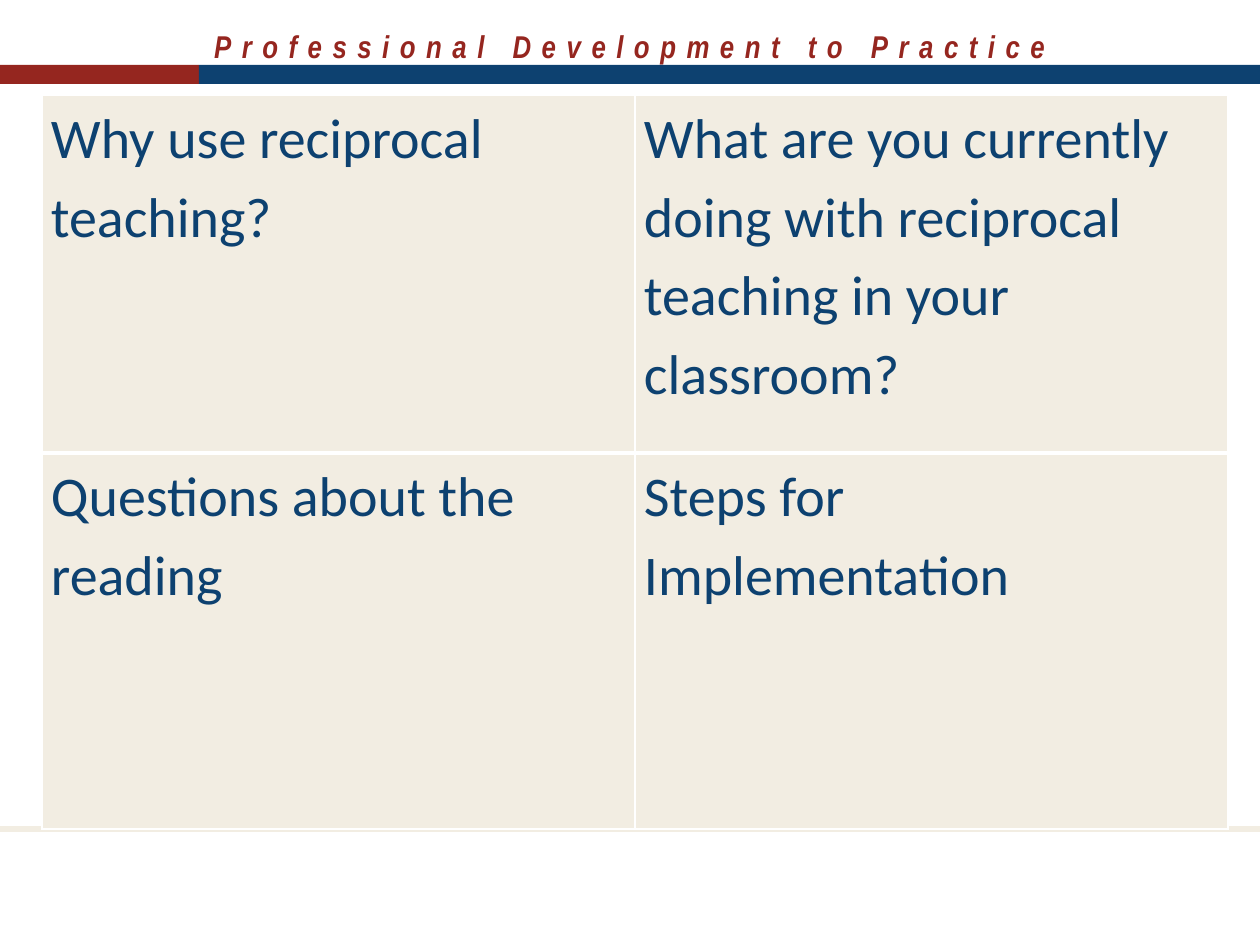
from lxml import etree
from pptx import Presentation
from pptx.dml.color import RGBColor
from pptx.enum.shapes import MSO_CONNECTOR, MSO_SHAPE
from pptx.enum.text import PP_ALIGN
from pptx.oxml.ns import qn
from pptx.util import Pt

RECTANGLE = MSO_SHAPE.RECTANGLE
STRAIGHT = MSO_CONNECTOR.STRAIGHT
CENTER = PP_ALIGN.CENTER
PX = 914400 / 126
COLORS = {"red": "95261F", "navy": "0D4170", "cream": "F2EDE2", "white": "FFFFFF"}
QUESTIONS = [
    ["Why use reciprocal teaching?",
     "What are you currently doing with reciprocal teaching in your classroom?"],
    ["Questions about the reading", "Steps for Implementation"],
]


def px(length):
    """Turn pixels into EMU."""
    return round(length * PX)


def color(name):
    """Look up a named colour."""
    return RGBColor.from_string(COLORS[name])


def style_font(font, name, size, color_name):
    """Set the face, size and colour of a font."""
    font.name, font.size = name, Pt(size)
    font.color.rgb = color(color_name)


def add_bar(slide, left, top, width, height, color_name):
    """Add a plain filled bar."""
    bar = slide.shapes.add_shape(RECTANGLE, px(left), px(top), px(width), px(height))
    bar.shadow.inherit = False
    bar.fill.solid()
    bar.fill.fore_color.rgb = color(color_name)
    bar.line.fill.background()


def add_header(slide, left, top, width):
    """Add the spaced title with the two-colour band below it."""
    box = slide.shapes.add_textbox(px(left), px(top), px(width), px(50))
    box.text_frame.word_wrap = True
    paragraph = box.text_frame.paragraphs[0]
    paragraph.alignment = CENTER
    run = paragraph.add_run()
    run.text = "Professional Development to Practice"
    run.font._element.set("spc", "600")
    style_font(paragraph.font, "Arial Narrow", 18, "red")
    paragraph.font.bold = paragraph.font.italic = True
    red_width = 199
    add_bar(slide, left, top + 44, red_width, 19, "red")
    add_bar(slide, left + red_width, top + 44, width - red_width, 19, "navy")


def add_footer_rule(slide, left, top, width):
    """Add the thin rule above the footer."""
    rule = slide.shapes.add_connector(STRAIGHT, px(left), px(top), px(left + width), px(top))
    rule.line.color.rgb = color("cream")
    rule.line.width = Pt(3)
    etree.SubElement(rule._element.spPr, qn("a:effectLst"))


def set_borders(cell, widths):
    """Draw white borders of the given point widths by side."""
    properties = cell._tc.get_or_add_tcPr()
    for index, side in enumerate("LRTB"):
        line = etree.Element(qn(f"a:ln{side}"), w=str(Pt(widths[side])))
        fill = etree.SubElement(line, qn("a:solidFill"))
        etree.SubElement(fill, qn("a:srgbClr"), val=COLORS["white"])
        properties.insert(index, line)


def fill_cell(cell, text, widths):
    """Write one question into its cell."""
    cell.margin_left = cell.margin_right = px(9)
    cell.margin_top = cell.margin_bottom = 0
    cell.fill.solid()
    cell.fill.fore_color.rgb = color("cream")
    set_borders(cell, widths)
    cell.text = text
    paragraph = cell.text_frame.paragraphs[0]
    paragraph.line_spacing = 1.15
    style_font(paragraph.font, "Calibri", 32, "navy")


def add_question_table(slide, left, top, width, row_heights):
    """Add the two-by-two table of discussion questions."""
    frame = slide.shapes.add_table(
        len(QUESTIONS), 2, px(left), px(top), px(width), px(sum(row_heights)))
    table = frame.table
    table.first_row = table.horz_banding = False
    for column in table.columns:
        column.width = px(width / 2)
    for index, texts in enumerate(QUESTIONS):
        table.rows[index].height = px(row_heights[index])
        widths = {"L": 1, "R": 1, "T": 3 if index else 1, "B": 1 if index else 3}
        for column, text in enumerate(texts):
            fill_cell(table.cell(index, column), text, widths)


def main():
    """Build and save the slide."""
    presentation = Presentation()
    presentation.slide_width, presentation.slide_height = px(1260), px(945)
    slide = presentation.slides.add_slide(presentation.slide_layouts[6])
    add_header(slide, 0, 21, 1260)
    add_footer_rule(slide, 0, 829, 1260)
    add_question_table(slide, 42, 95, 1186, [358, 376])
    presentation.save("out.pptx")


if __name__ == "__main__":
    main()
